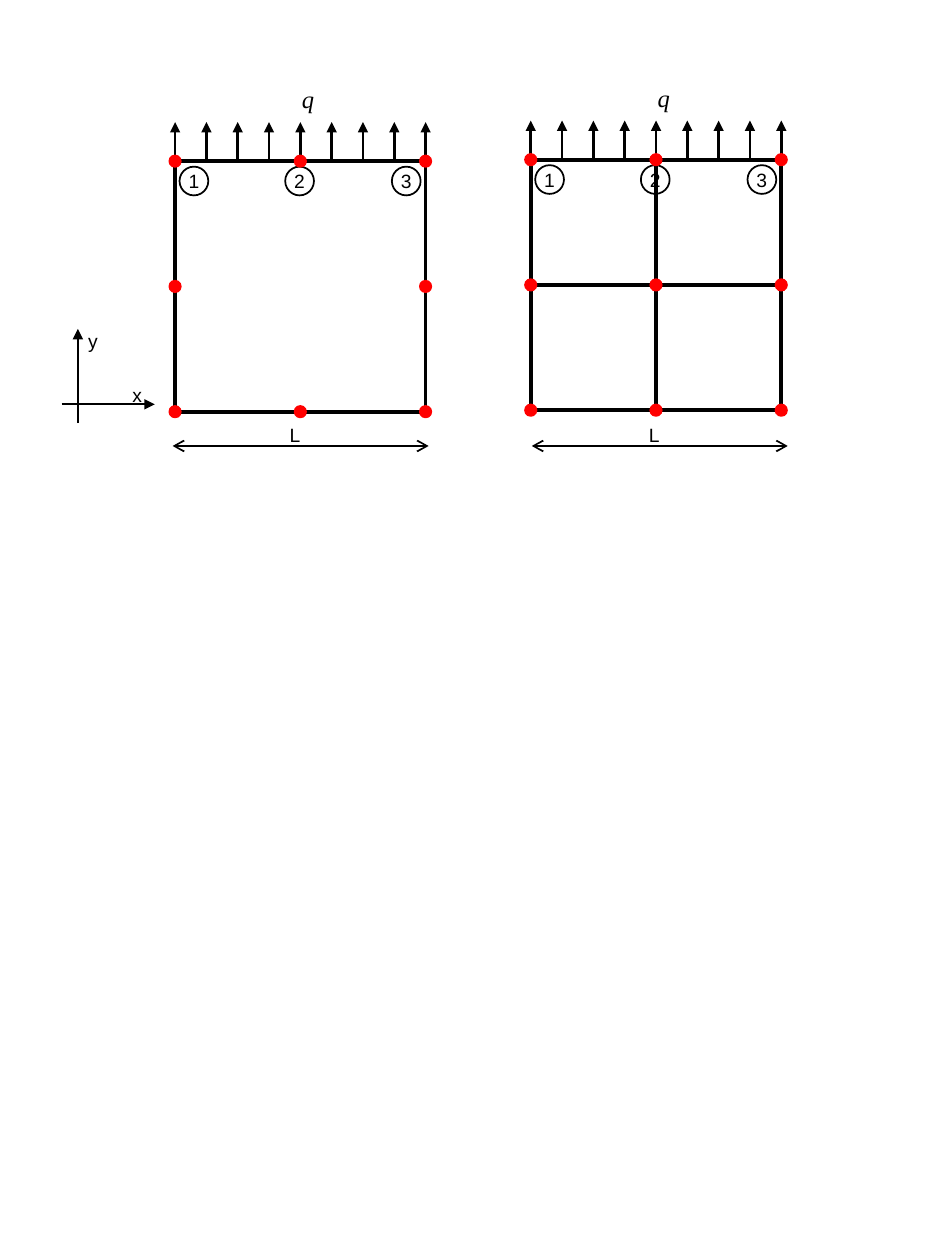
from pptx import Presentation
from pptx.dml.color import RGBColor
from pptx.enum.shapes import MSO_CONNECTOR, MSO_SHAPE
from pptx.enum.text import MSO_ANCHOR, PP_ALIGN
from pptx.oxml.ns import qn
from pptx.util import Cm, Pt
from lxml.etree import SubElement

COLORS = {"ink": "000000", "node": "FF0000"}
SIDE = 5.05
NODE_SIZE = 0.23
NUMBER_SIZE = 0.58
ARROW_GAPS = 8
ARROW_LENGTH = 0.79
DIMENSION_WIDTH = 5.16
DIMENSION_Y = 8.99


def color(name):
    return RGBColor.from_string(COLORS[name])


def write_text(shape, text, size=11, font="Arial", italic=False, align=PP_ALIGN.LEFT):
    frame = shape.text_frame
    frame.margin_left = frame.margin_right = frame.margin_top = frame.margin_bottom = 0
    paragraph = frame.paragraphs[0]
    paragraph.text = text
    paragraph.alignment = align
    paragraph.font.size = Pt(size)
    paragraph.font.name = font
    paragraph.font.italic = italic
    paragraph.font.color.rgb = color("ink")
    return frame


def add_label(slide, text, left, top, width=0.22, height=0.48, **style):
    box = slide.shapes.add_textbox(Cm(left), Cm(top), Cm(width), Cm(height))
    write_text(box, text, **style).word_wrap = False


def add_outline(slide, kind, left, top, size, weight, line="ink", fill=None):
    shape = slide.shapes.add_shape(kind, Cm(left), Cm(top), Cm(size), Cm(size))
    shape.shadow.inherit = False
    shape.line.color.rgb = color(line)
    shape.line.width = Pt(weight)
    if fill:
        shape.fill.solid()
        shape.fill.fore_color.rgb = color(fill)
    else:
        shape.fill.background()
    return shape


def add_line(slide, start, end, weight=1, head=None, tail=None):
    """Draw a line; head is the arrowhead at its start, tail the one at its end."""
    line = slide.shapes.add_connector(
        MSO_CONNECTOR.STRAIGHT, *(Cm(value) for value in (*start, *end)))
    line.line.color.rgb = color("ink")
    line.line.width = Pt(weight)
    properties = line._element.spPr
    SubElement(properties, qn("a:effectLst"))
    for tag, arrow in (("a:headEnd", head), ("a:tailEnd", tail)):
        if arrow:
            SubElement(properties.find(qn("a:ln")), qn(tag)).set("type", arrow)
    return line


def add_cross(slide, plate, left, top):
    middle_x, middle_y = left + SIDE / 2, top + SIDE / 2
    for start, end, first, last in (
            ((left, middle_y), (left + SIDE, middle_y), 1, 3),
            ((middle_x, top), (middle_x, top + SIDE), 0, 2)):
        line = add_line(slide, start, end, 2.25)
        line.begin_connect(plate, first)
        line.end_connect(plate, last)


def add_load(slide, left, top):
    add_label(slide, "q", left + 2.12, top - 1.55, 1.12, 0.76, size=14,
              font="Times New Roman", italic=True, align=PP_ALIGN.CENTER)
    for index in range(ARROW_GAPS + 1):
        x = left + index * SIDE / ARROW_GAPS
        add_line(slide, (x, top), (x, top - ARROW_LENGTH), 1.5, tail="triangle")


def add_numbers(slide, left, top):
    for number, offset in enumerate((0.09, 2.22, 4.37), start=1):
        circle = add_outline(slide, MSO_SHAPE.OVAL, left + offset, top + 0.11,
                             NUMBER_SIZE, 1)
        frame = write_text(circle, str(number), align=PP_ALIGN.CENTER)
        frame.vertical_anchor = MSO_ANCHOR.MIDDLE


def add_nodes(slide, left, top, with_center):
    for row in range(3):
        for column in range(3):
            if row == column == 1 and not with_center:
                continue
            add_outline(slide, MSO_SHAPE.OVAL,
                        left + column * SIDE / 2 - NODE_SIZE / 2,
                        top + row * SIDE / 2 - NODE_SIZE / 2,
                        NODE_SIZE, 1, line="node", fill="node")


def add_dimension(slide, left):
    add_line(slide, (left, DIMENSION_Y), (left + DIMENSION_WIDTH, DIMENSION_Y),
             head="arrow", tail="arrow")
    add_label(slide, "L", left + 2.36, DIMENSION_Y - 0.46)


def add_plate(slide, left, top, dimension_left, divided):
    plate = add_outline(slide, MSO_SHAPE.RECTANGLE, left, top, SIDE, 2.25)
    if divided:
        add_cross(slide, plate, left, top)
    add_load(slide, left, top)
    add_numbers(slide, left, top)
    add_nodes(slide, left, top, with_center=divided)
    add_dimension(slide, dimension_left)


def add_axes(slide):
    add_line(slide, (1.24, 8.15), (3.12, 8.15), tail="triangle")
    add_line(slide, (1.57, 8.53), (1.57, 6.63), tail="triangle")
    add_label(slide, "x", 2.67, 7.72)
    add_label(slide, "y", 1.78, 6.63)


def main():
    presentation = Presentation()
    presentation.slide_width, presentation.slide_height = Cm(19.05), Cm(25.4)
    slide = presentation.slides.add_slide(presentation.slide_layouts[6])
    add_plate(slide, 3.53, 3.25, dimension_left=3.48, divided=False)
    add_plate(slide, 10.7, 3.22, dimension_left=10.72, divided=True)
    add_axes(slide)
    presentation.save("out.pptx")


if __name__ == "__main__":
    main()
